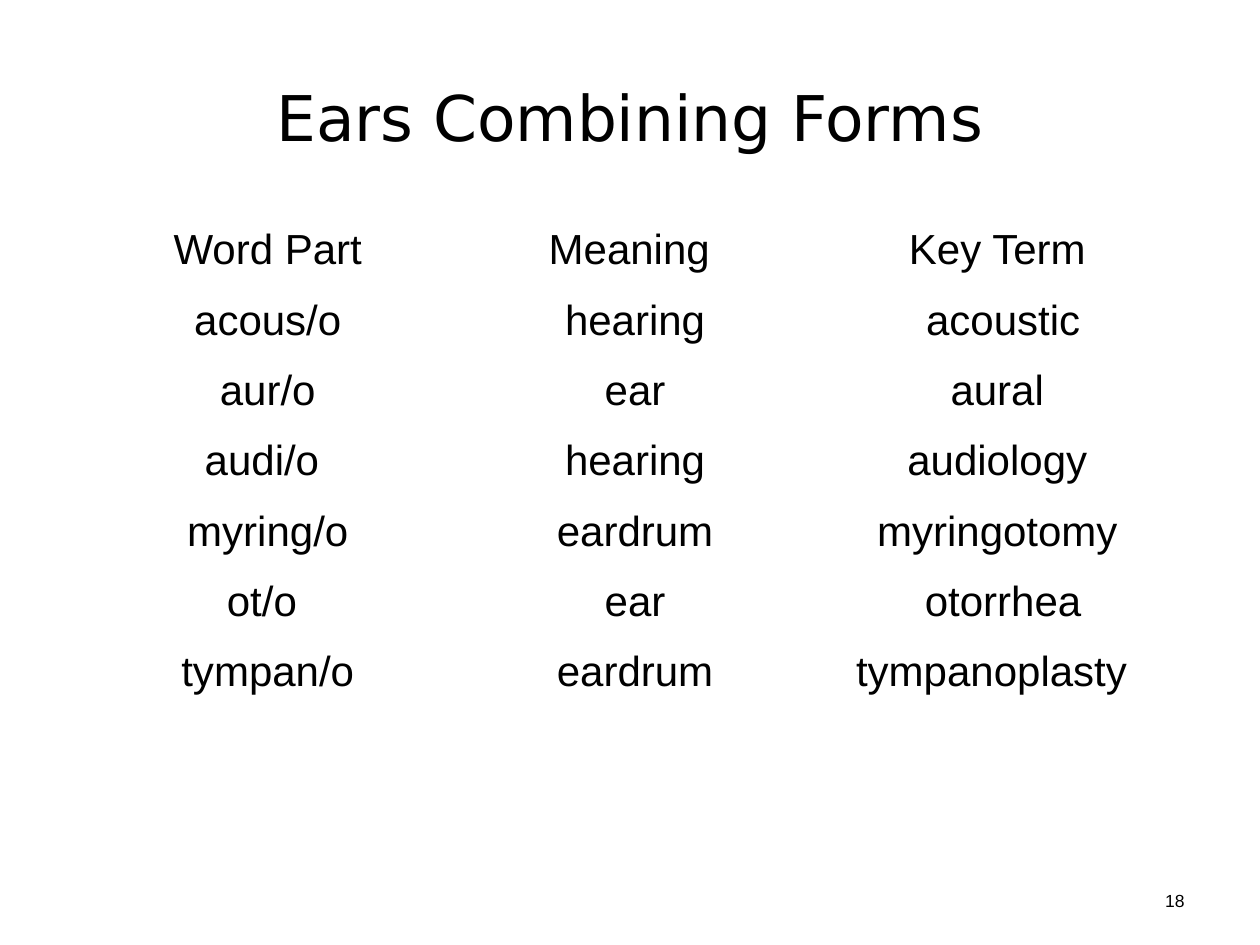
from pptx import Presentation
from pptx import util as u
from pptx.dml.color import RGBColor
from pptx.enum import text

PX = 9144
BLACK = "000000"
ROWS = [
    ("Word Part", "Meaning ", "Key Term"),
    ("acous/o", "hearing", " acoustic"),
    ("aur/o", "ear", "aural"),
    ("audi/o ", "hearing", "audiology"),
    ("myring/o", "eardrum", "myringotomy"),
    ("ot/o ", "ear", " otorrhea"),
    ("tympan/o", "eardrum", "tympanoplasty "),
]
COLUMN_WIDTHS = (325, 258, 317)


def emu(px):
    return u.Emu(round(px * PX))


def colour(value):
    return RGBColor.from_string(value)


def write(frame, words, size, font="Arial", align=text.PP_ALIGN.CENTER):
    frame.text = words
    para = frame.paragraphs[0]
    para.alignment = align
    span = para.runs[0]
    for key, value in {"name": font, "size": u.Pt(size), "bold": False}.items():
        setattr(span.font, key, value)
    span.font.color.rgb = colour(BLACK)


def set_frame(frame):
    formats = {
        "word_wrap": True,
        "auto_size": text.MSO_AUTO_SIZE.NONE,
        "vertical_anchor": text.MSO_ANCHOR.MIDDLE,
    }
    for key, value in formats.items():
        setattr(frame, key, value)


def add_title(page, box):
    title = page.shapes.title
    for key, px in zip(("left", "top", "width", "height"), box):
        setattr(title, key, emu(px))
    set_frame(title.text_frame)
    write(title.text_frame, "Ears Combining Forms", 36, "DejaVu Sans")


def add_terms(page, box):
    frame = page.shapes.add_table(len(ROWS), len(COLUMN_WIDTHS), *map(emu, box))
    table = frame.table
    for key in ("first_row", "horz_banding"):
        setattr(table, key, False)
    for column, width in zip(table.columns, COLUMN_WIDTHS):
        column.width = emu(width)
    for row, words in zip(table.rows, ROWS):
        row.height = emu(box[3] / len(ROWS))
        for cell, word in zip(row.cells, words):
            cell.fill.background()
            write(cell.text_frame, word, 24)
    style = table._tbl.tblPr.find("{*}tableStyleId")
    style.text = "{2D5ABB26-0587-4C30-8999-92F81FD0307C}"


def add_page_number(page, box):
    number = page.shapes.add_textbox(*map(emu, box))
    set_frame(number.text_frame)
    write(number.text_frame, "18", 10, align=text.PP_ALIGN.RIGHT)


def main():
    deck = Presentation()
    deck.slide_width, deck.slide_height = emu(1000), emu(750)
    page = deck.slides.add_slide(deck.slide_layouts[5])
    page.background.fill.solid()
    page.background.fill.fore_color.rgb = colour("FFFFFF")
    add_title(page, (50, 30, 900, 125))
    add_terms(page, (50, 175, 900, 391))
    add_page_number(page, (894, 685, 56, 60))
    deck.save("out.pptx")


if __name__ == "__main__":
    main()
